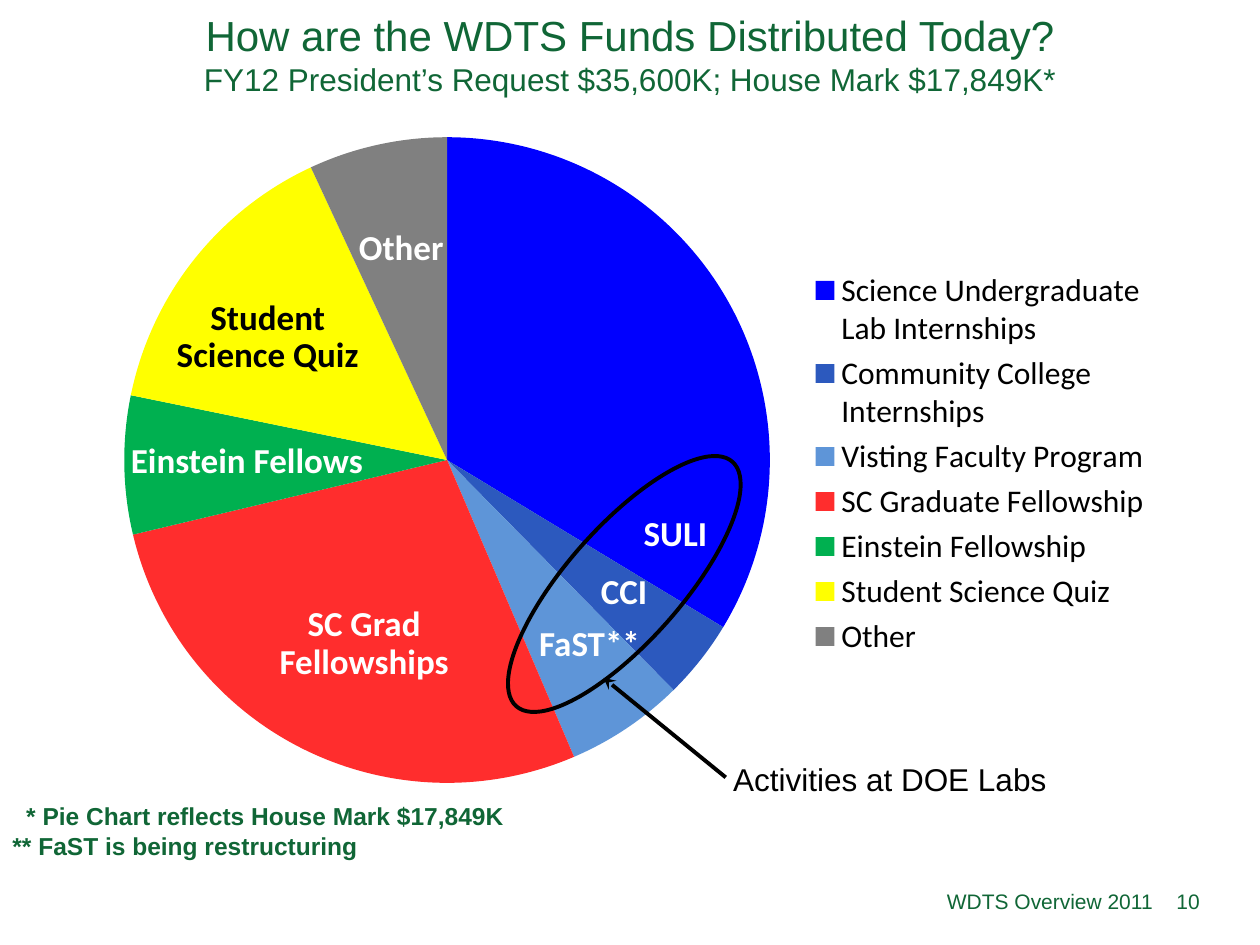
from lxml import etree
from pptx import Presentation, util as u
from pptx.chart.data import CategoryChartData
from pptx.dml.color import RGBColor
from pptx.enum import chart as ch, shapes, text
from pptx.oxml import parse_xml
from pptx.oxml.ns import nsdecls, qn

GREEN = RGBColor(0x10, 0x66, 0x36)
BLACK = RGBColor(0, 0, 0)
WHITE = RGBColor(0xFF, 0xFF, 0xFF)
SLICES = [
    ("Science Undergraduate Lab Internships", 34, RGBColor(0x00, 0x00, 0xFF)),
    ("Community College Internships", 4, RGBColor(0x2C, 0x59, 0xBE)),
    ("Visting Faculty Program", 6, RGBColor(0x5E, 0x95, 0xD8)),
    ("SC Graduate Fellowship", 28, RGBColor(0xFF, 0x2D, 0x2D)),
    ("Einstein Fellowship", 7, RGBColor(0x00, 0xB0, 0x50)),
    ("Student Science Quiz", 15, RGBColor(0xFF, 0xFF, 0x00)),
    ("Other", 7, RGBColor(0x80, 0x80, 0x80)),
]

# The slide is a grid of 100 columns by 75 rows; boxes are (column, row, width, height)
COLS, ROWS = 100, 75
CELL = u.Inches(0.1)
CENTER, RIGHT = text.PP_ALIGN.CENTER, text.PP_ALIGN.RIGHT


def cells(*values):
    return [u.Emu(round(v * CELL)) for v in values]


def inside(box, x, y, w=0, h=0):
    """Shift a box given relative to its region onto the slide grid."""
    return box[0] + x, box[1] + y, w, h


def write(p, words, size=18, color=GREEN, font="Arial", bold=False,
          align=None, spacing=None, indent=0):
    if indent:
        p._p.get_or_add_pPr().set("marL", str(u.Inches(indent)))
    p.alignment, p.line_spacing = align, spacing
    r = p.add_run()
    r.text = words
    r.font.size, r.font.name, r.font.bold = u.Pt(size), font, bold
    r.font.color.rgb = color


def add_text(s, box, words, wrap=True, anchor=text.MSO_ANCHOR.TOP, **fmt):
    tf = s.shapes.add_textbox(*cells(*box)).text_frame
    tf.word_wrap, tf.vertical_anchor = wrap, anchor
    tf.auto_size = text.MSO_AUTO_SIZE.NONE
    write(tf.paragraphs[0], words, **fmt)
    return tf


def set_layout(part, x, y, w, h, inner=False):
    """Fix a chart part's place, in shares of the chart."""
    target = '<c:layoutTarget val="inner"/>' if inner else ""
    modes = '<c:xMode val="edge"/><c:yMode val="edge"/>'
    sizes = "".join(f'<c:{k} val="{v}"/>' for k, v in zip("xywh", (x, y, w, h)))
    layout = parse_xml(f'<c:layout {nsdecls("c")}><c:manualLayout>'
                       f'{target}{modes}{sizes}</c:manualLayout></c:layout>')
    for old in part.findall(qn("c:layout")):
        part.remove(old)
    part.insert(0 if inner else 1, layout)


def add_title(s, box):
    sp = s.shapes.title
    sp.left, sp.top, sp.width, sp.height = cells(*box)
    tf = sp.text_frame
    tf.word_wrap, tf.vertical_anchor = True, text.MSO_ANCHOR.MIDDLE
    tf.auto_size = text.MSO_AUTO_SIZE.NONE
    write(tf.paragraphs[0], "How are the WDTS Funds Distributed Today?",
          size=24, align=CENTER)
    write(tf.add_paragraph(),
          "FY12 President’s Request $35,600K; House Mark $17,849K*", align=CENTER)


def add_pie(s, box):
    data = CategoryChartData()
    names, values, colors = zip(*SLICES)
    data.categories = names
    data.add_series("Series 1", values)
    chart = s.shapes.add_chart(ch.XL_CHART_TYPE.PIE, *cells(*box), data).chart
    chart.has_title = False
    chart.font.size, chart.font.name = u.Pt(10), "Calibri"
    chart.font.color.rgb = BLACK
    for i, color in enumerate(colors):
        fill = chart.plots[0].series[0].points[i].format.fill
        fill.solid()
        fill.fore_color.rgb = color

    # Legend
    chart.has_legend = True
    legend = chart.legend
    legend.position = ch.XL_LEGEND_POSITION.RIGHT
    legend.include_in_layout = False
    legend.font.size, legend.font.name = u.Pt(18), "Calibri"
    legend.font.color.rgb = BLACK
    set_layout(legend._element, 0.66, 0.22, 0.33, 0.58)
    set_layout(chart._chartSpace.chart.plotArea, 0.03, 0.03, 0.6, 0.95, inner=True)

    # Slice names
    fmt = dict(size=20, font="Calibri", bold=True)
    for words, x, y, w in [("SULI", 42.8, 31.1, 7.1), ("CCI", 39.4, 35.7, 5.8),
                           ("FaST**", 34.5, 39.8, 10.1), ("Other", 20.2, 8.4, 8.8)]:
        add_text(s, inside(box, x, y, w, 4.4), words, wrap=False, color=WHITE, **fmt)
    for words, x, y, w, h, color in [
            ("SC Grad Fellowships", 11.4, 38.6, 20.4, 7.1, WHITE),
            ("Einstein Fellows", -2.5, 25.7, 29.6, 4, WHITE),
            ("Student Science Quiz", 4.4, 14.3, 19.1, 7.1, BLACK)]:
        add_text(s, inside(box, x, y, w, h), words, color=color,
                 align=CENTER, spacing=0.9, **fmt)


def add_lab_callout(s, box):
    # Ring around the lab programs
    ring = s.shapes.add_shape(shapes.MSO_SHAPE.OVAL,
                              *cells(*inside(box, 0, 0, 9.1, 25.9)))
    ring.rotation = 41.5
    ring.shadow.inherit = False
    ring.fill.background()

    # Arrow from the caption to the ring
    start, end = inside(box, 12.6, 28.3)[:2], inside(box, 2.9, 20.4)[:2]
    arrow = s.shapes.add_connector(shapes.MSO_CONNECTOR.STRAIGHT,
                                   *cells(*start, *end))
    for sp in (ring, arrow):
        sp.line.color.rgb, sp.line.width = BLACK, u.Pt(2.25)
    etree.SubElement(arrow.line._get_or_add_ln(), qn("a:tailEnd"), type="stealth")
    etree.SubElement(arrow._element.spPr, qn("a:effectLst"))

    add_text(s, inside(box, 12.2, 26.4, 27.1, 4), "Activities at DOE Labs",
             wrap=False, color=BLACK)


def add_notes_and_footer(s, box):
    fmt = dict(size=14, bold=True)
    tf = add_text(s, inside(box, 0, 0, 41.2, 5.7),
                  "* Pie Chart reflects House Mark $17,849K",
                  wrap=False, indent=0.11, **fmt)
    write(tf.add_paragraph(), "** FaST is being restructuring", **fmt)
    for words, x, w in [("WDTS Overview 2011", 34.2, 58.3), ("10", 92, 4.2)]:
        add_text(s, inside(box, x, 6.4, w, 4), words, size=12, align=RIGHT,
                 anchor=text.MSO_ANCHOR.MIDDLE)


def main():
    prs = Presentation()
    prs.slide_width, prs.slide_height = cells(COLS, ROWS)
    s = prs.slides.add_slide(prs.slide_layouts[5])
    add_title(s, (0, 0.1, COLS, 8.3))
    add_pie(s, (7.3, 9, 85.4, 54.5))
    add_lab_callout(s, (45, 33.4, 39.3, 30.4))
    add_notes_and_footer(s, (0, 63.1, COLS, 10.4))
    prs.save("out.pptx")


if __name__ == "__main__":
    main()
